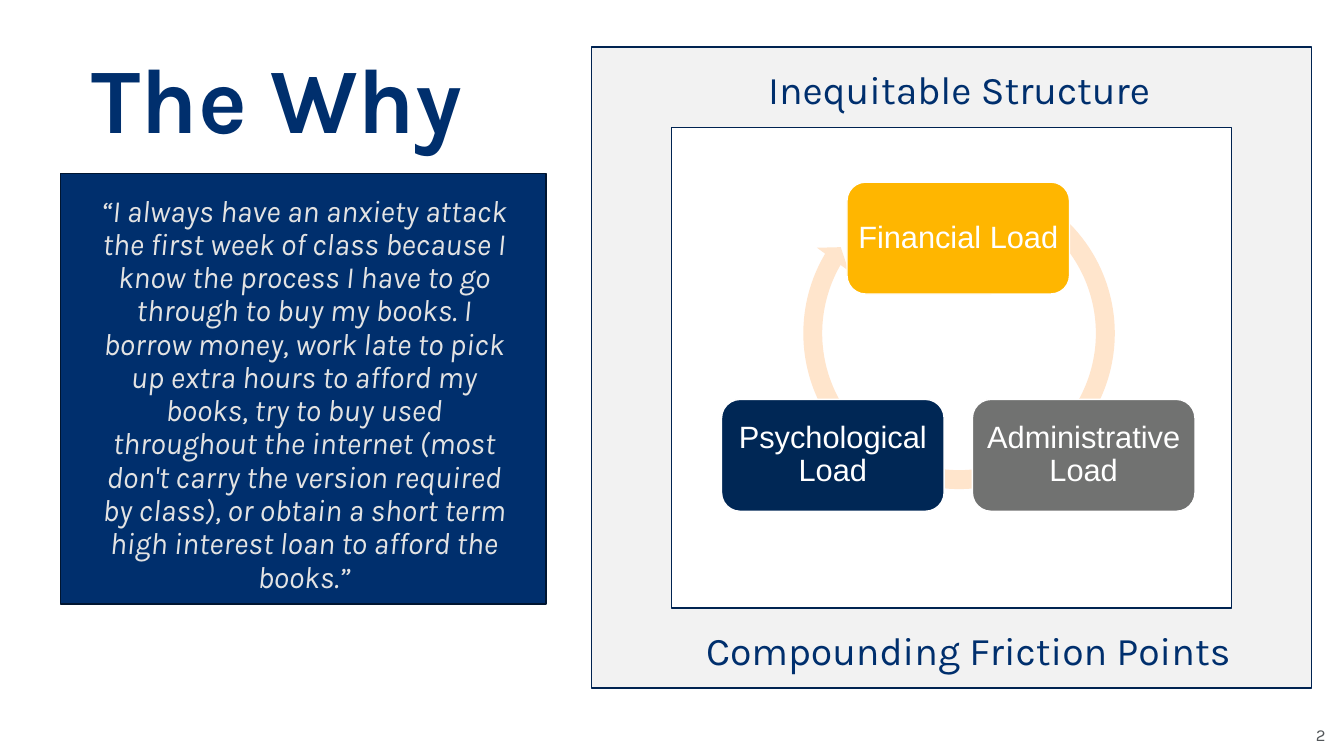
import math
from pptx import Presentation
from pptx import util as u
from pptx.dml.color import RGBColor
from pptx.enum import shapes, text

NAVY = RGBColor(0x00, 0x2F, 0x6D)
DEEP_NAVY = RGBColor(0x00, 0x27, 0x55)
PANEL_EDGE = RGBColor(0x00, 0x15, 0x30)
FRAME_EDGE = RGBColor(0x00, 0x23, 0x51)
GOLD = RGBColor(0xFF, 0xB6, 0x00)
GREY = RGBColor(0x71, 0x72, 0x71)
DARK_GREY = RGBColor(0x53, 0x57, 0x5A)
LIGHT_GREY = RGBColor(0xE3, 0xE3, 0xE3)
PALE_GREY = RGBColor(0xF2, 0xF2, 0xF2)
PEACH = RGBColor(0xFF, 0xE5, 0xCC)
WHITE = RGBColor(0xFF, 0xFF, 0xFF)

SHAPE = shapes.MSO_SHAPE
ALIGN = text.PP_ALIGN
ANCHOR = text.MSO_ANCHOR
TITLE = {"name": "Karla", "size": u.Pt(66), "bold": True}
HEADING = {"name": "Karla", "size": u.Pt(28)}
QUOTE = {"name": "Karla", "size": u.Pt(22), "italic": True}
NODE = {"name": "Arial", "size": u.Pt(22)}
NUMBER = {"name": "Karla", "size": u.Pt(12)}

QUOTE_TEXT = (
    "“I always have an anxiety attack the first week of class because I know "
    "the process I have to go through to buy my books. I borrow money, work "
    "late to pick up extra hours to afford my books, try to buy used throughout "
    "the internet (most don't carry the version required by class), or obtain a "
    "short term high interest loan to afford the books.”"
)
LOADS = [
    ("Financial Load", GOLD),
    ("Administrative Load", GREY),
    ("Psychological Load", DEEP_NAVY),
]
CYCLE_CENTRE = (24.15, 9.65)
CYCLE_RADIUS = 3.65
NODE_SIZE = (5.61, 2.82)
DEFAULT_INSETS = (0.25, 0.13, 0.25, 0.13)


def apply_format(target, values):
    for name, value in values.items():
        setattr(target, name, value)


def write_text(shape, content, style, color, align=ALIGN.CENTER,
               anchor=ANCHOR.TOP, insets=DEFAULT_INSETS, spacing=1.0):
    frame = shape.text_frame
    frame.text = content
    left, top, right, bottom = map(u.Cm, insets)
    apply_format(frame, {
        "word_wrap": True,
        "auto_size": text.MSO_AUTO_SIZE.NONE,
        "vertical_anchor": anchor,
        "margin_left": left,
        "margin_top": top,
        "margin_right": right,
        "margin_bottom": bottom,
    })
    paragraph = frame.paragraphs[0]
    apply_format(paragraph, {"alignment": align, "line_spacing": spacing})
    font = paragraph.runs[0].font
    apply_format(font, style)
    font.color.rgb = color


def add_title(slide, content):
    title = slide.shapes.title
    apply_format(title, {
        "left": u.Cm(1.04), "top": u.Cm(-0.3),
        "width": u.Cm(31.29), "height": u.Cm(4.7),
    })
    write_text(title, content, TITLE, NAVY, ALIGN.LEFT, ANCHOR.MIDDLE,
               (1.27, 1.27, 1.27, 0.13), 0.9)


def add_panel(slide, kind, box, fill, edge=None):
    shape = slide.shapes.add_shape(kind, *map(u.Cm, box))
    shape.shadow.inherit = False
    shape.fill.solid()
    shape.fill.fore_color.rgb = fill
    if edge is None:
        shape.line.fill.background()
    else:
        shape.line.color.rgb = edge
        shape.line.width = u.Pt(1)
    return shape


def add_label(slide, box, *content, **layout):
    write_text(slide.shapes.add_textbox(*map(u.Cm, box)), *content, **layout)


def add_cycle(slide):
    ring = add_panel(slide, SHAPE.CIRCULAR_ARROW, (19.99, 4.22, 8.36, 8.36), PEACH)
    for index, value in enumerate((0.057, 3.405, 126.232, 181.277, 0.059)):
        ring.adjustments[index] = value
    width, height = NODE_SIZE
    for index, (label, fill) in enumerate(LOADS):
        angle = math.tau * index / len(LOADS)
        left = CYCLE_CENTRE[0] + CYCLE_RADIUS * math.sin(angle) - width / 2
        top = CYCLE_CENTRE[1] - CYCLE_RADIUS * math.cos(angle) - height / 2
        node = add_panel(slide, SHAPE.ROUNDED_RECTANGLE,
                         (left, top, width, height), fill, WHITE)
        write_text(node, label, NODE, WHITE, anchor=ANCHOR.MIDDLE,
                   insets=(0.13, 0.13, 0.13, 0.13), spacing=0.9)


def main():
    presentation = Presentation()
    presentation.slide_width = u.Cm(33.87)
    presentation.slide_height = u.Cm(19.05)
    slide = presentation.slides.add_slide(presentation.slide_layouts[5])

    add_panel(slide, SHAPE.RECTANGLE, (1.52, 4.37, 12.24, 10.85), NAVY, PANEL_EDGE)
    add_panel(slide, SHAPE.FRAME, (14.91, 1.19, 18.14, 16.15), PALE_GREY, FRAME_EDGE)
    add_title(slide, "The Why")
    add_cycle(slide)
    add_label(slide, (16.74, 1.52, 14.86, 1.45), "Inequitable Structure", HEADING, NAVY)
    add_label(slide, (16.97, 15.65, 14.86, 1.45), "Compounding Friction Points",
              HEADING, NAVY)
    add_label(slide, (0.61, 4.8, 14.1, 8.13), QUOTE_TEXT, QUOTE, LIGHT_GREY,
              insets=(1.9, 0.13, 1.9, 0.64), spacing=0.9)
    add_label(slide, (26.04, 18.01, 7.62, 1.02), "2", NUMBER, DARK_GREY,
              align=ALIGN.RIGHT, anchor=ANCHOR.MIDDLE)
    presentation.save("out.pptx")


if __name__ == "__main__":
    main()
